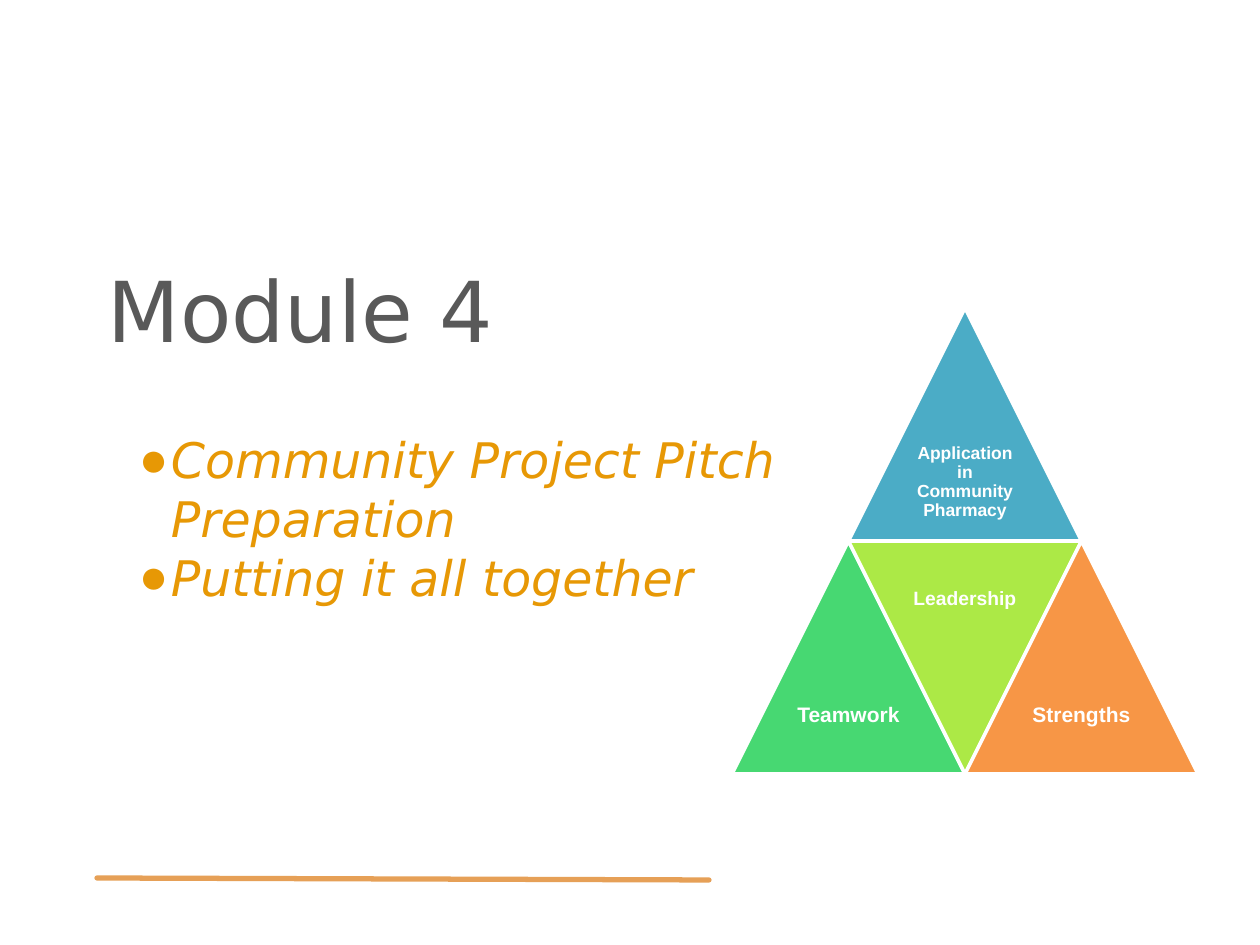
import pptx
import pptx.util
import pptx.dml.color
import pptx.enum.shapes
import pptx.enum.text
import pptx.oxml.ns
import lxml.etree

SCALE = 914400 / 126
SANS, ARIAL = "DejaVu Sans", "Arial"
COLORS = {
    "grey": "595959", "amber": "E79805", "rule": "E6A057", "white": "FFFFFF",
    "blue": "4BACC6", "green": "47D872", "lime": "ACE946", "orange": "F79646",
}
CENTER = pptx.enum.text.PP_ALIGN.CENTER
LEFT = pptx.enum.text.PP_ALIGN.LEFT
MIDDLE = pptx.enum.text.MSO_ANCHOR.MIDDLE
TOP = pptx.enum.text.MSO_ANCHOR.TOP


def px(num):
    return pptx.util.Emu(round(num * SCALE))


def color(name):
    return pptx.dml.color.RGBColor.from_string(COLORS[name])


def add(parent, tag, **attrs):
    return lxml.etree.SubElement(parent, pptx.oxml.ns.qn(tag), attrs)


def bullet(para, mark, hue, indent, hang):
    props = para._p.get_or_add_pPr()
    props.set("marL", str(px(indent)))
    props.set("indent", str(-px(hang)))
    add(add(props, "a:buClr"), "a:srgbClr", val=COLORS[hue])
    add(props, "a:buFont", typeface=ARIAL)
    add(props, "a:buChar", char=mark)


def write(shape, lines, size, hue, face=SANS, bold=False, italic=False,
          align=LEFT, anchor=TOP, inset=13, spacing=1.0, mark=None):
    frame = shape.text_frame
    frame.word_wrap = True
    frame.auto_size = pptx.enum.text.MSO_AUTO_SIZE.NONE
    frame.vertical_anchor = anchor
    frame.margin_left = frame.margin_right = px(inset)
    frame.margin_top = frame.margin_bottom = px(inset)
    for i, line in enumerate(lines):
        para = frame.add_paragraph() if i else frame.paragraphs[0]
        para.text = line
        para.alignment = align
        para.line_spacing = spacing
        para.space_before = para.space_after = pptx.util.Pt(0)
        if mark:
            bullet(para, mark, hue, 63, 32)
        font = para.font
        font.name, font.size = face, pptx.util.Pt(size)
        font.bold, font.italic = bold, italic
        font.color.rgb = color(hue)


def heading(slide, left, top, width, height):
    title = slide.shapes.title
    title.left, title.top = px(left), px(top)
    title.width, title.height = px(width), px(height)
    write(title, ["Module 4"], 48, "grey", anchor=MIDDLE)


def topics(slide, left, top, width, height):
    box = slide.shapes.add_textbox(px(left), px(top), px(width), px(height))
    write(box, ["Community Project Pitch Preparation", "Putting it all together"],
          28, "amber", italic=True, mark="●")


def rule(slide, left, top, width, height):
    line = slide.shapes.add_connector(
        pptx.enum.shapes.MSO_CONNECTOR.STRAIGHT,
        px(left), px(top), px(left + width), px(top + height))
    line.line.color.rgb = color("rule")
    line.line.width = pptx.util.Pt(3)
    line.line._get_or_add_ln().set("cap", "rnd")
    add(line._element.spPr, "a:effectLst")


def pyramid(slide, left, top, side):
    """Four triangles, each half as wide as the whole, with a label in each."""
    half, quart = side / 2, side / 4
    tiles = [
        ("Application in Community Pharmacy", 10, "blue", 1, 0, False),
        ("Teamwork", 12, "green", 0, 1, False),
        ("Leadership", 11, "lime", 1, 1, True),
        ("Strengths", 12, "orange", 2, 1, False),
    ]
    for label, size, fill, col, row, flip in tiles:
        x, y = left + col * quart, top + row * half
        tile = slide.shapes.add_shape(
            pptx.enum.shapes.MSO_SHAPE.ISOSCELES_TRIANGLE,
            px(x), px(y), px(half), px(half))
        tile.shadow.inherit = False
        tile.rotation = 180 if flip else 0
        tile.fill.solid()
        tile.fill.fore_color.rgb = color(fill)
        tile.line.color.rgb = color("white")
        tile.line.width = pptx.util.Pt(2)
        drop = 0 if flip else quart
        box = slide.shapes.add_textbox(
            px(x + quart / 2), px(y + drop), px(quart), px(quart))
        write(box, [label], size, "white", face=ARIAL, bold=True,
              align=CENTER, anchor=MIDDLE, inset=5, spacing=0.9)


def main():
    deck = pptx.Presentation()
    deck.slide_width, deck.slide_height = px(1260), px(945)
    slide = deck.slides.add_slide(deck.slide_layouts[5])
    rule(slide, 97, 878, 612, 2)
    heading(slide, 95, 207, 1071, 203)
    topics(slide, 95, 417, 976, 76)
    pyramid(slide, 732, 308, 466)
    deck.save("out.pptx")


if __name__ == "__main__":
    main()
